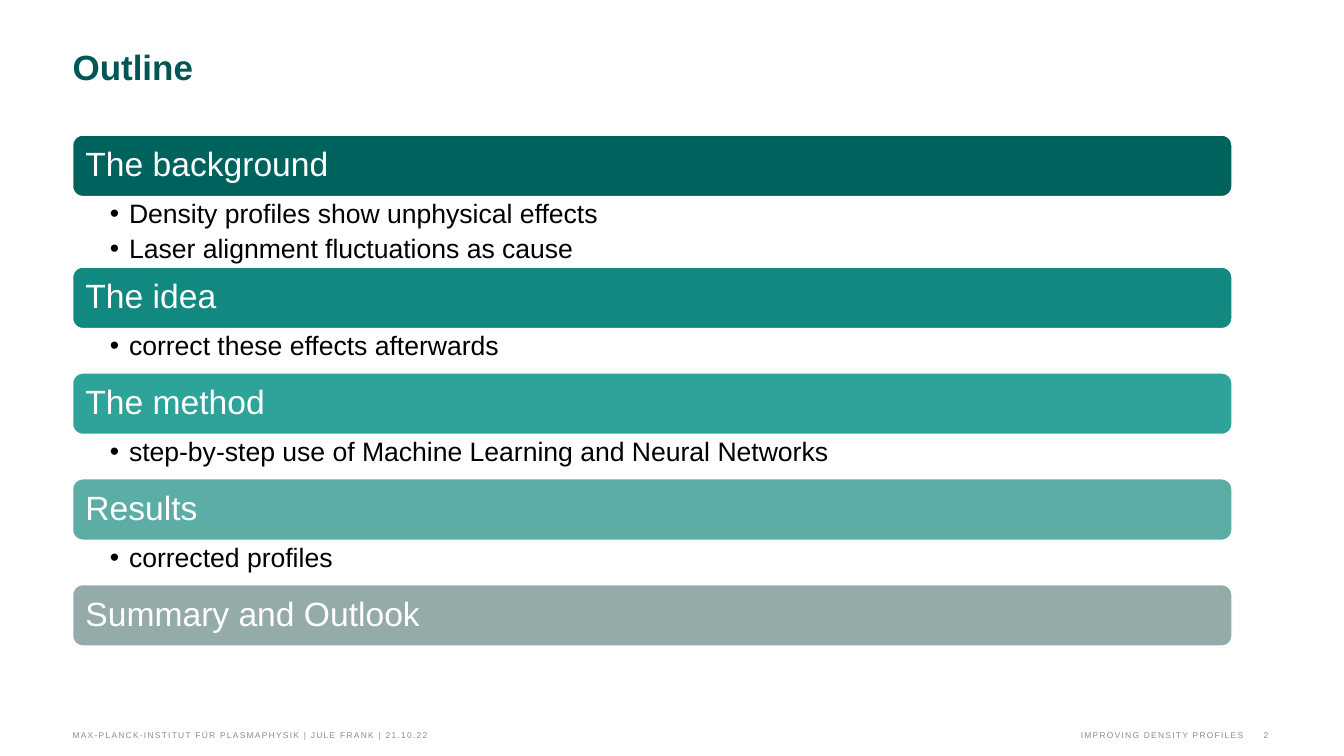
"""Build the outline slide of a talk on improving density profiles."""
from lxml.etree import SubElement
from pptx import Presentation
from pptx.dml.color import RGBColor
from pptx.enum.shapes import MSO_SHAPE as Shape
from pptx.enum.text import MSO_ANCHOR as Anchor, PP_ALIGN as Align
from pptx.oxml.ns import qn
from pptx.util import Inches, Pt

TITLE = "Outline"
SECTIONS = [
    ("The background", "00625D", ["Density profiles show unphysical effects",
                                  "Laser alignment fluctuations as cause"]),
    ("The idea", "118980", ["correct these effects afterwards"]),
    ("The method", "2EA399", ["step-by-step use of Machine Learning and Neural Networks"]),
    ("Results", "5BADA6", ["corrected profiles"]),
    ("Summary and Outlook", "95ABA9", []),
]
FOOTERS = [
    ("MAX-PLANCK-INSTITUT FÜR PLASMAPHYSIK | JULE FRANK | 21.10.22", 0.72, 6.69, Align.LEFT),
    ("IMPROVING DENSITY PROFILES", 4.43, 7.9, Align.RIGHT),
    ("2", 12.34, 0.24, Align.RIGHT),
]
LEFT, TOP, WIDTH = 0.72, 1.34, 11.5
BAR_HEIGHT = 0.61
POINTS_HEIGHT = {0: 0, 1: 0.44, 2: 0.7}


def color(hex_code):
    return RGBColor.from_string(hex_code)


def set_frame(frame, anchor, left=0, top=0, right=0, bottom=0, wrap=True):
    frame.word_wrap = wrap
    frame.vertical_anchor = anchor
    frame.margin_left, frame.margin_top = Inches(left), Inches(top)
    frame.margin_right, frame.margin_bottom = Inches(right), Inches(bottom)


def style(paragraph, size, hex_code, align=Align.LEFT, bold=False):
    paragraph.alignment = align
    for run in paragraph.runs:
        run.font.name, run.font.size, run.font.bold = "Arial", Pt(size), bold
        run.font.color.rgb = color(hex_code)


def add_bullet(paragraph):
    properties = paragraph._p.get_or_add_pPr()
    properties.set("marL", str(Inches(0.19)))
    properties.set("indent", str(Inches(-0.19)))
    SubElement(properties, qn("a:buFont")).set("typeface", "Arial")
    SubElement(properties, qn("a:buChar")).set("char", "•")


def add_heading(slide, heading, fill, top):
    bar = slide.shapes.add_shape(Shape.ROUNDED_RECTANGLE, Inches(LEFT), Inches(top),
                                 Inches(WIDTH), Inches(BAR_HEIGHT))
    bar.shadow.inherit = False
    bar.fill.solid()
    bar.fill.fore_color.rgb = color(fill)
    bar.line.color.rgb = color("FFFFFF")
    bar.line.width = Pt(1)
    set_frame(bar.text_frame, Anchor.MIDDLE, 0.1, 0.1, 0.1, 0.1)
    bar.text_frame.text = heading
    paragraph = bar.text_frame.paragraphs[0]
    paragraph.line_spacing = 0.9
    style(paragraph, 24, "FFFFFF")


def add_points(slide, points, top, height):
    box = slide.shapes.add_textbox(Inches(LEFT), Inches(top), Inches(WIDTH), Inches(height))
    set_frame(box.text_frame, Anchor.TOP, 0.37, 0.03, 0.19, 0.03)
    box.text_frame.text = "\n".join(points)
    for paragraph in box.text_frame.paragraphs:
        add_bullet(paragraph)
        paragraph.line_spacing = 0.9
        paragraph.space_after = Pt(4.4)
        style(paragraph, 19, "000000")


def add_footer(slide, text, left, width, align):
    box = slide.shapes.add_textbox(Inches(left), Inches(7.18), Inches(width), Inches(0.16))
    set_frame(box.text_frame, Anchor.BOTTOM, wrap=False)
    box.text_frame.text = text
    paragraph = box.text_frame.paragraphs[0]
    style(paragraph, 6, "8C8C8C", align)
    paragraph.runs[0].font._element.set("spc", "90")


def main():
    deck = Presentation()
    deck.slide_width, deck.slide_height = Inches(13.33), Inches(7.5)
    slide = deck.slides.add_slide(deck.slide_layouts[5])

    title = slide.shapes.title
    title.left, title.top = Inches(LEFT), Inches(0.48)
    title.width, title.height = Inches(10.51), Inches(0.86)
    set_frame(title.text_frame, Anchor.TOP)
    title.text_frame.text = TITLE
    title_line = title.text_frame.paragraphs[0]
    title_line.line_spacing = Pt(28)
    style(title_line, 25, "005555", bold=True)

    top = TOP
    for heading, fill, points in SECTIONS:
        add_heading(slide, heading, fill, top)
        top += BAR_HEIGHT
        height = POINTS_HEIGHT[len(points)]
        if points:
            add_points(slide, points, top + 0.01, height)
        top += height

    for footer in FOOTERS:
        add_footer(slide, *footer)
    deck.save("out.pptx")


if __name__ == "__main__":
    main()
